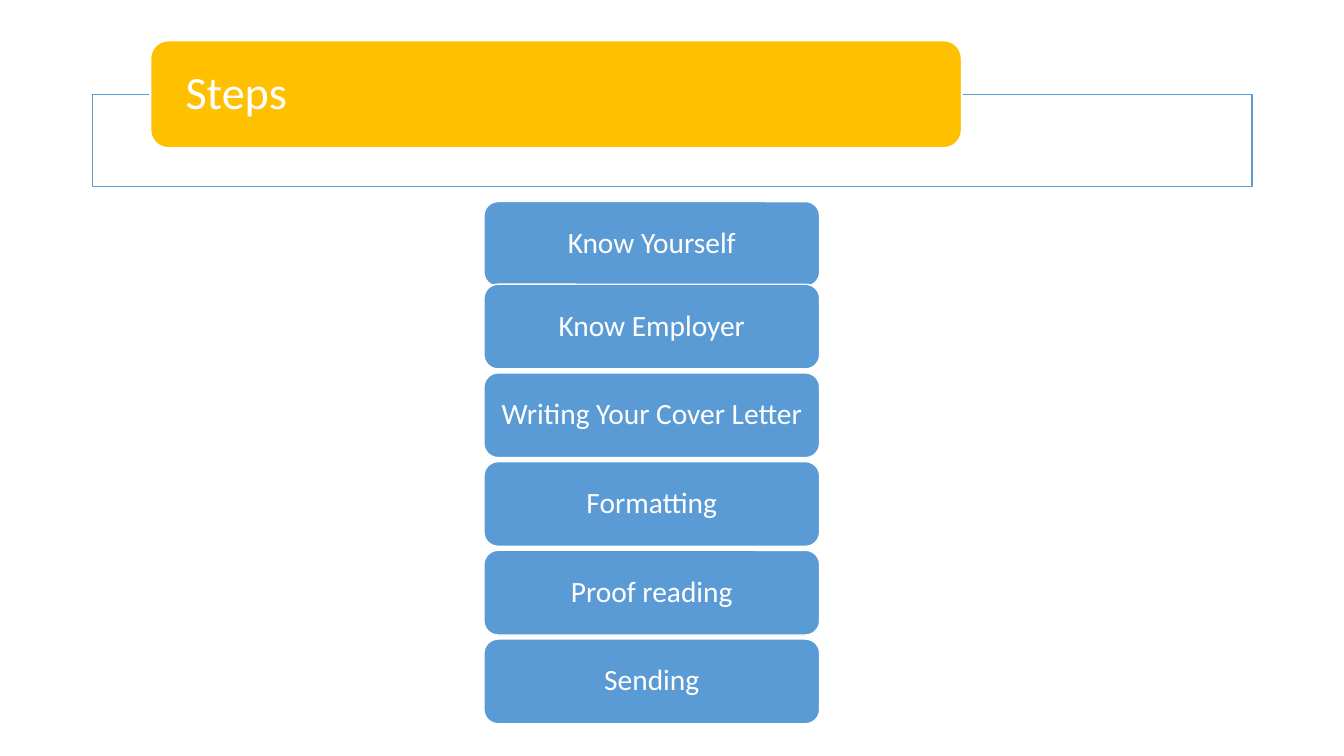
"""Build the slide that lists the steps of writing a cover letter."""
from dataclasses import dataclass

from lxml import etree
from pptx import Presentation
from pptx.dml.color import RGBColor
from pptx.enum.shapes import MSO_SHAPE
from pptx.enum.text import MSO_ANCHOR, MSO_AUTO_SIZE, PP_ALIGN
from pptx.oxml.ns import qn
from pptx.util import Pt

RECTANGLE = MSO_SHAPE.RECTANGLE
ROUNDED = MSO_SHAPE.ROUNDED_RECTANGLE
MIDDLE = MSO_ANCHOR.MIDDLE
NO_AUTOFIT = MSO_AUTO_SIZE.NONE
LEFT = PP_ALIGN.LEFT
CENTER = PP_ALIGN.CENTER

EMU_PER_PX = 9144
TITLE_ONLY_LAYOUT = 5


@dataclass(frozen=True)
class Theme:
    """Colours, font and type sizes of the slide."""
    white: str = "FFFFFF"
    blue: str = "5B9BD5"
    gold: str = "FFC000"
    font: str = "Calibri"
    title_size: int = 33
    step_size: int = 21
    line_spacing: float = 0.9


def px(length):
    """Turn px, 100 to the inch, into EMU."""
    return length * EMU_PER_PX


def write(shape, text, *, theme, size, align=CENTER, inset_x=13, inset_y=8):
    """Put formatted text into a shape."""
    frame = shape.text_frame
    frame.text = text
    frame.word_wrap = True
    frame.auto_size = NO_AUTOFIT
    frame.vertical_anchor = MIDDLE
    frame.margin_left = frame.margin_right = px(inset_x)
    frame.margin_top = frame.margin_bottom = px(inset_y)
    paragraph = frame.paragraphs[0]
    paragraph.alignment = align
    paragraph.line_spacing = theme.line_spacing
    font = paragraph.runs[0].font
    font.name = theme.font
    font.size = Pt(size)
    font.color.rgb = RGBColor.from_string(theme.white)


class StepsSlide:
    """Holds the theme and the slide being drawn."""

    def __init__(self, slide, theme):
        """Keep the slide and its theme."""
        self.slide = slide
        self.theme = theme

    def box(self, kind, left, top, width, height, *, fill, line, line_width=1, opacity=100):
        """Draw a filled and outlined preset shape."""
        shape = self.slide.shapes.add_shape(kind, px(left), px(top), px(width), px(height))
        shape.shadow.inherit = False
        shape.fill.solid()
        shape.fill.fore_color.rgb = RGBColor.from_string(fill)
        shape.line.color.rgb = RGBColor.from_string(line)
        shape.line.width = Pt(line_width)
        if opacity < 100:
            color = shape.element.spPr.find(qn("a:solidFill")).find(qn("a:srgbClr"))
            etree.SubElement(color, qn("a:alpha")).set("val", str(opacity * 1000))
        return shape

    def title(self, text, left, top, width, height):
        """Place the title in front of the shapes drawn so far."""
        heading = self.slide.shapes.title
        heading.left, heading.top = px(left), px(top)
        heading.width, heading.height = px(width), px(height)
        write(heading, text, theme=self.theme, size=self.theme.title_size,
              align=LEFT, inset_x=30, inset_y=0)
        heading.element.getparent().append(heading.element)

    def step(self, text, top):
        """Draw one step of the column."""
        theme = self.theme
        card = self.box(ROUNDED, 480, top, 333, 84, fill=theme.blue, line=theme.white)
        write(card, text, theme=theme, size=theme.step_size)


def main():
    """Build and save the presentation."""
    theme = Theme()
    presentation = Presentation()
    presentation.slide_width = px(1333)
    presentation.slide_height = px(750)
    layout = presentation.slide_layouts[TITLE_ONLY_LAYOUT]
    steps_slide = StepsSlide(presentation.slides.add_slide(layout), theme)

    steps_slide.box(RECTANGLE, 92, 94, 1150, 91, fill=theme.white, line=theme.blue, opacity=90)
    steps_slide.box(ROUNDED, 149, 40, 805, 107, fill=theme.gold, line=theme.white, line_width=1.5)
    steps_slide.title("Steps", 154, 46, 795, 96)

    steps_slide.step("Know Yourself", 200)
    later_steps = ("Know Employer", "Writing Your Cover Letter", "Formatting",
                   "Proof reading", "Sending")
    for index, step in enumerate(later_steps):
        steps_slide.step(step, 282 + 88 * index)

    presentation.save("out.pptx")


if __name__ == "__main__":
    main()
